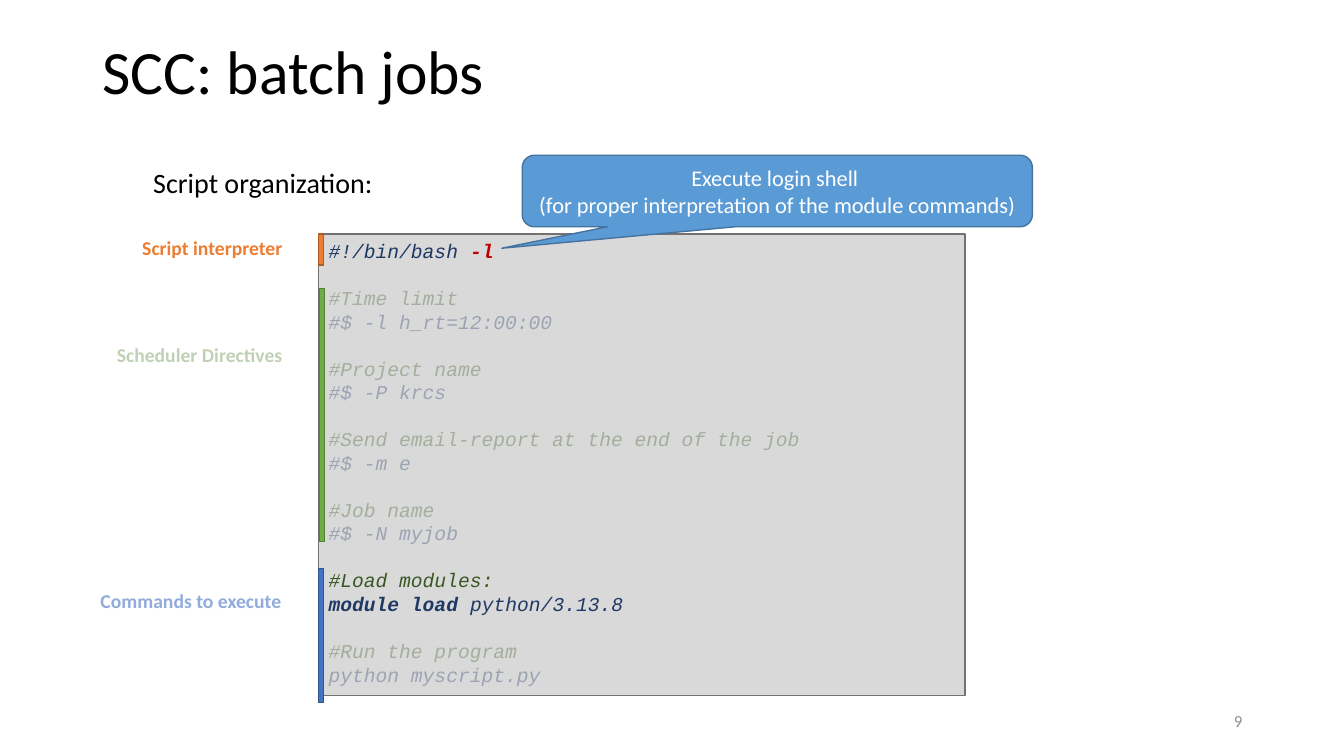
import pptx
import pptx.util
import pptx.dml.color
import pptx.enum.shapes
import pptx.enum.text
import pptx.oxml.ns
from lxml import etree

Inches = pptx.util.Inches
Pt = pptx.util.Pt
RGBColor = pptx.dml.color.RGBColor
Shape = pptx.enum.shapes.MSO_SHAPE
Align = pptx.enum.text.PP_ALIGN
Anchor = pptx.enum.text.MSO_ANCHOR

BLACK = RGBColor(0x00, 0x00, 0x00)
WHITE = RGBColor(0xFF, 0xFF, 0xFF)
GREY = RGBColor(0x8C, 0x8C, 0x8C)
PANEL = RGBColor(0xD9, 0xD9, 0xD9)
EDGE = RGBColor(0x76, 0x71, 0x71)
NAVY = RGBColor(0x20, 0x38, 0x64)
MOSS = RGBColor(0x38, 0x57, 0x23)
RED = RGBColor(0xC0, 0x00, 0x00)
ORANGE = RGBColor(0xED, 0x7D, 0x31)
RUST = RGBColor(0xAF, 0x5C, 0x24)
GREEN = RGBColor(0x70, 0xAD, 0x47)
PINE = RGBColor(0x53, 0x80, 0x35)
LEAF = RGBColor(0x54, 0x82, 0x35)
BLUE = RGBColor(0x44, 0x72, 0xC4)
DEEP = RGBColor(0x32, 0x54, 0x91)
SKY = RGBColor(0x5B, 0x9B, 0xD5)
STEEL = RGBColor(0x43, 0x73, 0x9E)

SANS = "Calibri"
MONO = "Courier New"
FADE = 32
CODE = 14
GAP = 16.8

BLOCKS = [
    [[("#!/bin/bash ", NAVY, 100, False), ("-l", RED, 100, True)]],
    [[("#Time limit", MOSS, FADE, False)],
     [("#$ -l h_rt=12:00:00", NAVY, FADE, False)]],
    [[("#Project name", MOSS, FADE, False)],
     [("#$ -P krcs", NAVY, FADE, False)]],
    [[("#Send email-report at the end of the job", MOSS, FADE, False)],
     [("#$ -m e", NAVY, FADE, False)]],
    [[("#Job name", MOSS, FADE, False)],
     [("#$ -N myjob", NAVY, FADE, False)]],
    [[("#Load modules:", MOSS, 100, False)],
     [("module load ", NAVY, 100, True), ("python/3.13.8", NAVY, 100, False)]],
    [[("#Run the program", MOSS, FADE, False)],
     [("python myscript.py", NAVY, FADE, False)]],
]
PARTS = [
    ("Script interpreter", ORANGE, 100, (1.22, 2.29, 1.68, 0.34),
     ORANGE, RUST, (3.16, 2.32, 0.05, 0.31)),
    ("Scheduler Directives", LEAF, 36, (1.02, 3.35, 1.88, 0.34),
     GREEN, PINE, (3.17, 2.86, 0.05, 2.51)),
    ("Commands to execute", BLUE, 59, (0.56, 5.79, 2.33, 0.34),
     BLUE, DEEP, (3.16, 5.64, 0.05, 1.33)),
]
NOTE = ["Execute login shell ",
        "(for proper interpretation of the module commands)"]

deck = pptx.Presentation()
deck.slide_width = Inches(13.33)
deck.slide_height = Inches(7.5)
slide = deck.slides.add_slide(deck.slide_layouts[6])


def add_run(para, text, size, color, face=SANS, bold=False, slant=False, alpha=100):
    run = para.add_run()
    run.text = text
    font = run.font
    font.name, font.size = face, Pt(size)
    font.bold, font.italic = bold, slant
    font.color.rgb = color
    if alpha < 100:
        tint = run._r.find(".//" + pptx.oxml.ns.qn("a:srgbClr"))
        etree.SubElement(tint, pptx.oxml.ns.qn("a:alpha"), val=str(alpha * 1000))


def add_text(text, box, size, color, align=Align.LEFT, anchor=Anchor.TOP,
             bold=False, alpha=100):
    frame = slide.shapes.add_textbox(*map(Inches, box)).text_frame
    frame.word_wrap = True
    frame.vertical_anchor = anchor
    para = frame.paragraphs[0]
    para.alignment = align
    add_run(para, text, size, color, bold=bold, alpha=alpha)
    return frame


def add_box(kind, box, fill, line):
    shape = slide.shapes.add_shape(kind, *map(Inches, box))
    shape.shadow.inherit = False
    shape.fill.solid()
    shape.fill.fore_color.rgb = fill
    shape.line.color.rgb = line
    shape.line.width = Pt(1)
    shape.text_frame.word_wrap = True
    return shape


def next_para(frame, first):
    return frame.paragraphs[0] if first else frame.add_paragraph()


title = add_text("SCC: batch jobs", (0.92, 0.01, 11.5, 1.45), 44, BLACK,
                 anchor=Anchor.MIDDLE)
title.paragraphs[0].line_spacing = 0.9
intro = add_text("Script organization:", (0.92, 1.63, 11.5, 0.91), 20, BLACK)
intro.margin_left = Inches(0.6)
intro.paragraphs[0].line_spacing = 0.9

panel = add_box(Shape.RECTANGLE, (3.16, 2.32, 6.41, 4.58), PANEL, EDGE).text_frame
panel.vertical_anchor = Anchor.TOP
for b, block in enumerate(BLOCKS):
    for n, line in enumerate(block):
        para = next_para(panel, b == n == 0)
        para.alignment = Align.LEFT
        if b and n == 0:
            para.space_before = Pt(GAP)
        for text, color, alpha, bold in line:
            add_run(para, text, CODE, color, MONO, bold, True, alpha)

for text, color, alpha, place, fill, line, bar in PARTS:
    add_box(Shape.RECTANGLE, bar, fill, line)
    add_text(text, place, 14, color, Align.RIGHT, bold=True, alpha=alpha)

call = add_box(Shape.ROUNDED_RECTANGULAR_CALLOUT, (5.18, 1.54, 5.06, 0.71), SKY, STEEL)
for i, value in enumerate((-0.54, 0.8, 0.17)):
    call.adjustments[i] = value
call.text_frame.vertical_anchor = Anchor.MIDDLE
for n, text in enumerate(NOTE):
    para = next_para(call.text_frame, n == 0)
    para.alignment = Align.CENTER
    add_run(para, text, 16, WHITE)

add_text("9", (9.42, 6.95, 3, 0.4), 12, GREY, Align.RIGHT, Anchor.MIDDLE)

deck.save("out.pptx")
